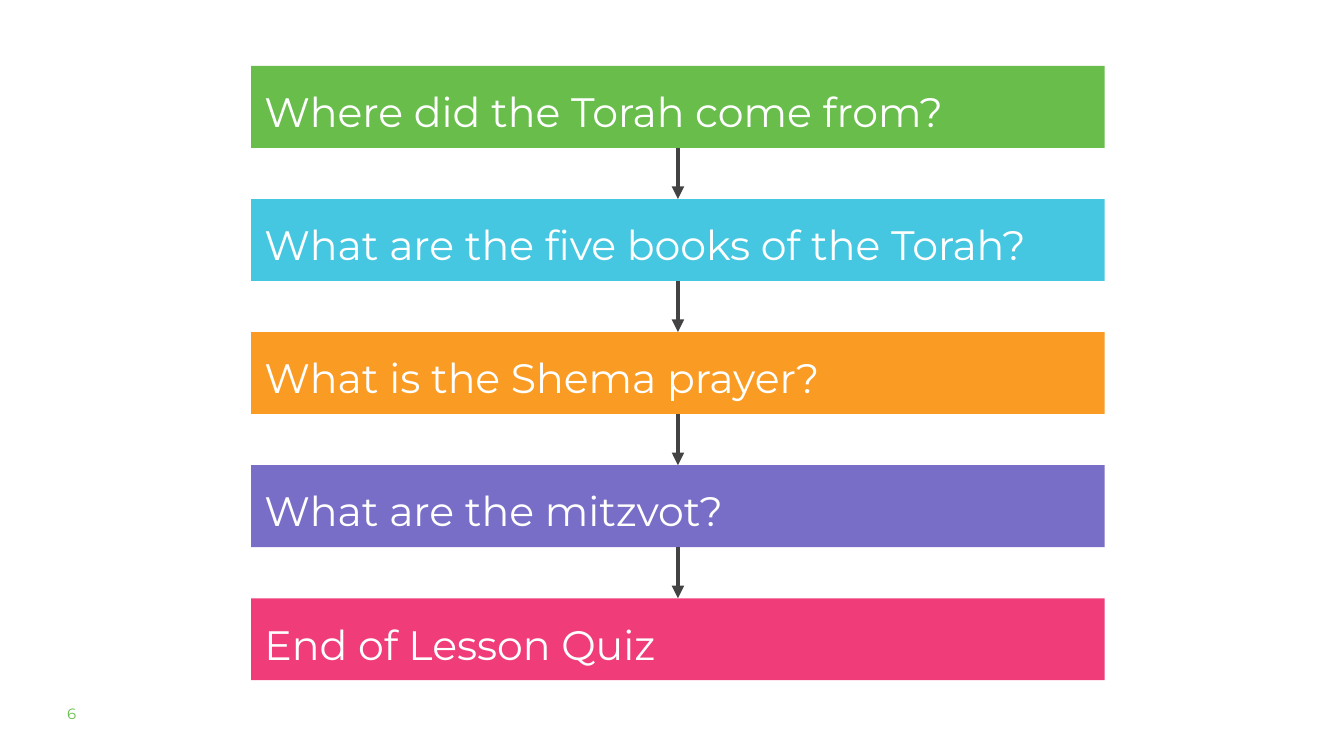
"""Builds the lesson outline slide: five steps joined by arrows."""
import pptx
import pptx.dml.color
import pptx.enum.shapes
import pptx.enum.text
import pptx.oxml.ns
import pptx.util
from lxml import etree

Pt = pptx.util.Pt

STEPS = [
    ("Where did the Torah come from?", "69BE4B"),
    ("What are the five books of the Torah?", "46C7E1"),
    ("What is the Shema prayer?", "FA9B23"),
    ("What are the mitzvot?", "786EC8"),
    ("End of Lesson Quiz", "F03C78"),
]
PAGE_NUMBER = "6"
LEFT, TOP, WIDTH, HEIGHT, PITCH = 134.6, 35.3, 457.2, 43.9, 71.3


def color(value):
    return pptx.dml.color.RGBColor.from_string(value)


def set_text(sp, text, size, hex_color, inset, line_spacing=None):
    tf = sp.text_frame
    frame_format = {
        "word_wrap": True,
        "vertical_anchor": pptx.enum.text.MSO_ANCHOR.TOP,
        "margin_left": Pt(inset),
        "margin_top": Pt(inset),
        "margin_right": Pt(inset),
        "margin_bottom": Pt(inset),
    }
    for name, value in frame_format.items():
        setattr(tf, name, value)
    p = tf.paragraphs[0]
    p.alignment = pptx.enum.text.PP_ALIGN.LEFT
    p.line_spacing = line_spacing
    r = p.add_run()
    r.text = text
    for name, value in {"name": "Montserrat", "size": Pt(size)}.items():
        setattr(r.font, name, value)
    r.font.color.rgb = color(hex_color)


def add_step(s, index, text, fill):
    sp = s.shapes.add_shape(
        pptx.enum.shapes.MSO_SHAPE.RECTANGLE,
        Pt(LEFT), Pt(TOP + index * PITCH), Pt(WIDTH), Pt(HEIGHT))
    sp.shadow.inherit = False
    sp.fill.solid()
    sp.fill.fore_color.rgb = color(fill)
    sp.line.fill.background()
    set_text(sp, text, 22, "FFFFFF", 7.2, 1.15)
    return sp


def add_arrow(s, upper, lower):
    arrow = s.shapes.add_connector(
        pptx.enum.shapes.MSO_CONNECTOR.STRAIGHT, 0, 0, 0, 0)
    arrow.begin_connect(upper, 2)
    arrow.end_connect(lower, 0)
    arrow.line.color.rgb = color("434343")
    arrow.line.width = Pt(2.25)
    qn = pptx.oxml.ns.qn
    etree.SubElement(arrow.line._get_or_add_ln(), qn("a:tailEnd"), type="triangle")
    etree.SubElement(arrow._element.spPr, qn("a:effectLst"))


def main():
    prs = pptx.Presentation()
    prs.slide_width, prs.slide_height = Pt(720), Pt(405)
    s = prs.slides.add_slide(prs.slide_layouts[6])
    boxes = [add_step(s, i, *step) for i, step in enumerate(STEPS)]
    for upper, lower in zip(boxes, boxes[1:]):
        add_arrow(s, upper, lower)
    number = s.shapes.add_textbox(Pt(36), Pt(377.3), Pt(57), Pt(14.4))
    set_text(number, PAGE_NUMBER, 8, "65BE4B", 0)
    prs.save("out.pptx")


if __name__ == "__main__":
    main()
